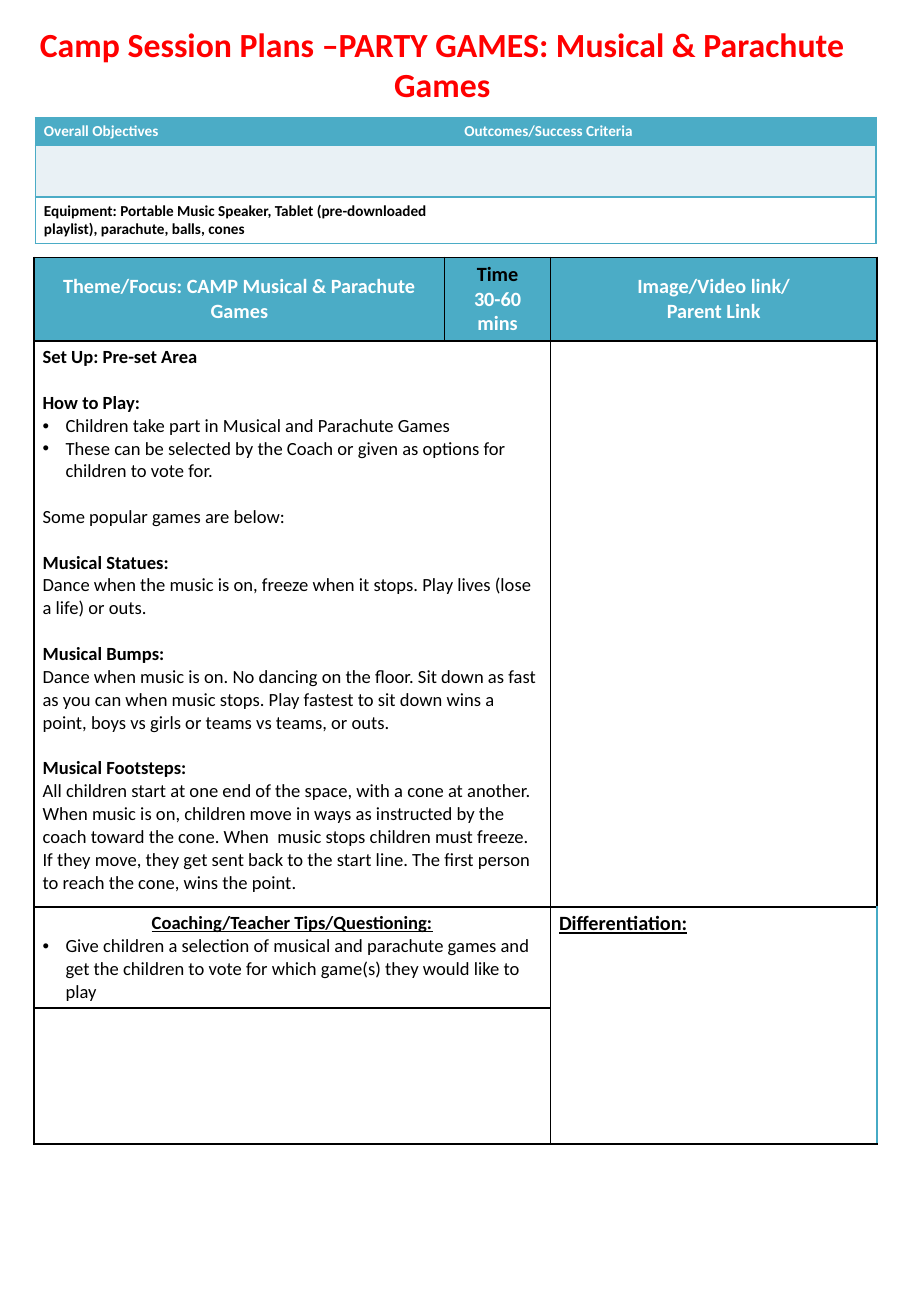
from dataclasses import dataclass
from lxml import etree
from pptx import Presentation
from pptx.dml.color import RGBColor
from pptx.enum import text
from pptx.oxml import ns
from pptx.util import Cm, Pt


@dataclass(frozen=True)
class Theme:
    font: str = "Calibri"
    title: str = "FF0000"
    teal: str = "4BACC6"
    edge: str = "46AAC5"
    pale: str = "E9F1F5"
    white: str = "FFFFFF"
    black: str = "000000"
    title_size: float = 20
    head_size: float = 12
    body_size: float = 11
    small_size: float = 9
    gap: float = 13.4


THEME = Theme()
CENTER = text.PP_ALIGN.CENTER
TITLE = "Camp Session Plans –PARTY GAMES: Musical & Parachute Games"

SMALL = dict(size=THEME.small_size, bold=True)
SMALL_HEAD = dict(SMALL, color=THEME.white)
HEAD = dict(size=THEME.head_size, bold=True, color=THEME.white, align=CENTER)
STRONG = dict(bold=True)
SECTION = dict(bold=True, before=THEME.gap)
BULLET = dict(bullet=True)

OBJECTIVES = {
    (0, 0): [("Overall Objectives", SMALL_HEAD)],
    (0, 1): [("Outcomes/Success Criteria", SMALL_HEAD)],
    (2, 0): [("Equipment: Portable Music Speaker, Tablet (pre-downloaded playlist), "
              "parachute, balls, cones", SMALL)],
}

SESSION = {
    (0, 0): [("Theme/Focus: CAMP Musical & Parachute Games", HEAD)],
    (0, 1): [("Time", dict(HEAD, color=THEME.black)), ("30-60 mins", HEAD)],
    (0, 2): [("Image/Video link/", HEAD), ("Parent Link", HEAD)],
    (1, 0): [
        ("Set Up: Pre-set Area", STRONG),
        ("How to Play:", SECTION),
        ("Children take part in Musical and Parachute Games", BULLET),
        ("These can be selected by the Coach or given as options for children to vote for.",
         BULLET),
        ("Some popular games are below:", dict(before=THEME.gap)),
        ("Musical Statues:", SECTION),
        ("Dance when the music is on, freeze when it stops. "
         "Play lives (lose a life) or outs.", {}),
        ("Musical Bumps:", SECTION),
        ("Dance when music is on. No dancing on the floor. Sit down as fast as you can "
         "when music stops. Play fastest to sit down wins a point, boys vs girls or teams "
         "vs teams, or outs.", {}),
        ("Musical Footsteps:", SECTION),
        ("All children start at one end of the space, with a cone at another. When music "
         "is on, children move in ways as instructed by the coach toward the cone. When  "
         "music stops children must freeze. If they move, they get sent back to the start "
         "line. The first person to reach the cone, wins the point.", {}),
    ],
    (2, 0): [
        ("Coaching/Teacher Tips/Questioning:", dict(bold=True, underline=True, align=CENTER)),
        ("Give children a selection of musical and parachute games and get the children "
         "to vote for which game(s) they would like to play", BULLET),
    ],
    (2, 2): [("Differentiation:", dict(size=THEME.head_size, bold=True, underline=True))],
}
SESSION_MERGES = [((1, 0), (1, 1)), ((2, 0), (2, 1)), ((3, 0), (3, 1)), ((2, 2), (3, 2))]


def add_line(frame, content, size=THEME.body_size, color=THEME.black, bold=False,
             underline=False, align=text.PP_ALIGN.LEFT, bullet=False, before=0):
    first = frame.paragraphs[0]
    para = frame.add_paragraph() if first.runs else first
    para.alignment = align
    if bullet:
        props = para._p.get_or_add_pPr()
        props.set("marL", str(Cm(0.48)))
        props.set("indent", str(-Cm(0.48)))
        etree.SubElement(props, ns.qn("a:buFont"), typeface="Arial")
        etree.SubElement(props, ns.qn("a:buChar"), char="•")
    if before:
        para.space_before = Pt(before)
    span = para.add_run()
    span.text = content
    font = span.font
    font.name, font.size = THEME.font, Pt(size)
    font.bold, font.underline = bold, underline
    font.color.rgb = RGBColor.from_string(color)


def set_borders(cell, borders):
    props = cell._tc.get_or_add_tcPr()
    for side in "LRTB":
        color, width = borders.get(side, (None, 0))
        line = etree.SubElement(props, ns.qn(f"a:ln{side}"), w=str(Pt(width)))
        if color:
            fill = etree.SubElement(line, ns.qn("a:solidFill"))
            etree.SubElement(fill, ns.qn("a:srgbClr"), val=color)
        else:
            etree.SubElement(line, ns.qn("a:noFill"))


def add_grid(page, left, top, widths, heights, content, fills, borders_at, merges=()):
    table = page.shapes.add_table(len(heights), len(widths), Cm(left), Cm(top),
                                  Cm(sum(widths)), Cm(sum(heights))).table
    table.horz_banding = False
    for column, width in zip(table.columns, widths):
        column.width = Cm(width)
    for row, height in zip(table.rows, heights):
        row.height = Cm(height)
    for start, end in merges:
        table.cell(*start).merge(table.cell(*end))
    for r, fill in enumerate(fills):
        for c in range(len(widths)):
            cell = table.cell(r, c)
            cell.margin_left = cell.margin_right = Cm(0.18)
            cell.margin_top = cell.margin_bottom = Cm(0.1)
            set_borders(cell, borders_at(r, c))
            cell.fill.solid()
            cell.fill.fore_color.rgb = RGBColor.from_string(fill)
            for line, style in content.get((r, c), []):
                add_line(cell.text_frame, line, **style)
    return table


def objectives_borders(row, column):
    return {side: (THEME.teal, 1) for side in ("LTB", "TRB")[column]}


def session_borders(row, column):
    borders = {side: (THEME.black, 1) for side in "LRTB"}
    if row >= 2 and column == 2:
        borders["R"] = (THEME.edge, 0.75)
    return borders


def main():
    deck = Presentation()
    deck.slide_width, deck.slide_height = Cm(19.05), Cm(27.51)
    page = deck.slides.add_slide(deck.slide_layouts[5])

    title = page.shapes.title
    title.left, title.top, title.width, title.height = Cm(0.46), Cm(0.36), Cm(17.58), Cm(1.96)
    frame = title.text_frame
    frame.word_wrap = True
    frame.auto_size = text.MSO_AUTO_SIZE.NONE
    frame.vertical_anchor = text.MSO_ANCHOR.TOP
    add_line(frame, TITLE, size=THEME.title_size, color=THEME.title, bold=True, align=CENTER)

    session = add_grid(page, 0.71, 5.38, [8.59, 2.21, 6.83], [1.71, 11.83, 2.05, 2.84],
                       SESSION, [THEME.teal] + [THEME.white] * 3, session_borders,
                       SESSION_MERGES)
    for column in range(3):
        session.cell(0, column).vertical_anchor = text.MSO_ANCHOR.MIDDLE

    add_grid(page, 0.74, 2.46, [8.79] * 2, [0.58, 1.07, 0.94], OBJECTIVES,
             [THEME.teal, THEME.pale, THEME.white], objectives_borders)
    deck.save("out.pptx")


if __name__ == "__main__":
    main()
